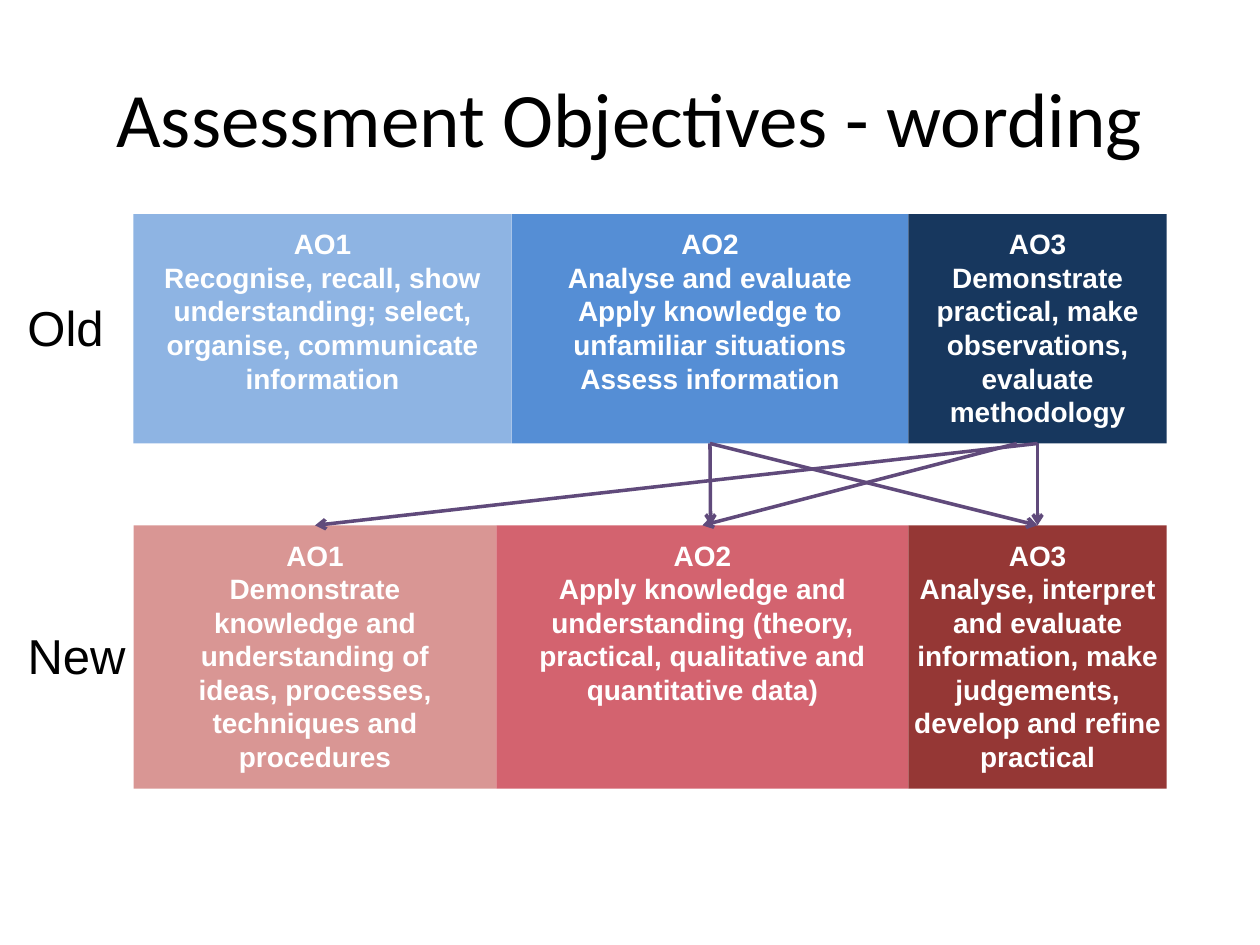
from lxml.etree import SubElement
from pptx import Presentation
from pptx.dml.color import RGBColor
from pptx.enum.shapes import MSO_CONNECTOR, MSO_SHAPE
from pptx.enum.text import MSO_ANCHOR, PP_ALIGN
from pptx.oxml.ns import qn
from pptx.util import Inches, Pt

COLOURS = {
    "black": "000000", "white": "FFFFFF", "arrow": "604A7B",
    "old1": "8EB4E3", "old2": "558ED5", "old3": "17375E",
    "new1": "D99694", "new2": "D3636F", "new3": "953735",
}
LEFT = 1.06
TOP, BOTTOM = 0, 2  # connection sites of a rectangle

# label, top, height, label width, then (width, side inset, colour, lines) per box
OLD = ("Old", 1.7, 1.82, 0.94, [
    (3.0, 0.2, "old1", ["AO1", "Recognise, recall, show understanding; select, "
                        "organise, communicate information"]),
    (3.15, 0.2, "old2", ["AO2", "Analyse and evaluate",
                         "Apply knowledge to unfamiliar situations",
                         "Assess information"]),
    (2.05, 0.04, "old3", ["AO3", "Demonstrate practical, make observations, "
                          "evaluate methodology"]),
])
NEW = ("New", 4.17, 2.09, 1.02, [
    (2.88, 0.2, "new1", ["AO1", "Demonstrate knowledge and understanding of ideas, "
                         "processes, techniques and procedures"]),
    (3.27, 0.2, "new2", ["AO2", "Apply knowledge and understanding (theory, practical, "
                         "qualitative and quantitative data)"]),
    (2.05, 0.04, "new3", ["AO3", "Analyse, interpret and evaluate information, make "
                          "judgements, develop and refine practical"]),
])


class SlideBuilder:
    """Holds the text style and the slide being filled."""

    def __init__(self, page, font="Arial"):
        self.page = page
        self.font = font

    def style(self, para, size, colour, bold=False, font=None):
        para.font.name = font or self.font
        para.font.size = Pt(size)
        para.font.bold = bold
        para.font.color.rgb = RGBColor.from_string(COLOURS[colour])

    def title(self, text):
        title = self.page.shapes.title
        title.left, title.top = Inches(0.5), Inches(0.3)
        title.width, title.height = Inches(9), Inches(1.25)
        title.text_frame.text = text
        title.text_frame.vertical_anchor = MSO_ANCHOR.MIDDLE
        para = title.text_frame.paragraphs[0]
        para.alignment = PP_ALIGN.CENTER
        self.style(para, 44, "black", font="Calibri")

    def label(self, text, top, width, height=0.57):
        box = self.page.shapes.add_textbox(
            Inches(0.12), Inches(top), Inches(width), Inches(height))
        box.text_frame.word_wrap = True
        box.text_frame.text = text
        self.style(box.text_frame.paragraphs[0], 28, "black")

    def objective(self, left, top, width, height, inset, colour, lines):
        box = self.page.shapes.add_shape(
            MSO_SHAPE.RECTANGLE, Inches(left), Inches(top), Inches(width), Inches(height))
        box.shadow.inherit = False
        box.fill.solid()
        box.fill.fore_color.rgb = RGBColor.from_string(COLOURS[colour])
        box.line.fill.background()
        frame = box.text_frame
        frame.word_wrap = True
        frame.vertical_anchor = MSO_ANCHOR.TOP
        frame.margin_left = frame.margin_right = Inches(inset)
        frame.margin_top = frame.margin_bottom = Inches(0.1)
        frame.text = "\n".join(lines)
        for para in frame.paragraphs:
            para.alignment = PP_ALIGN.CENTER
            self.style(para, 16, "white", bold=True)
        return box

    def row(self, name, top, height, label_width, objectives):
        """Draw a label and its abutting boxes; return the boxes."""
        boxes = []
        left = LEFT
        for width, inset, colour, lines in objectives:
            boxes.append(self.objective(left, top, width, height, inset, colour, lines))
            left += width
        self.label(name, top + height / 2 - 0.3, label_width)
        return boxes

    def arrow(self, start_x, end_x, source=None, target=None):
        """Run from the old row down to the new one, joined to any box given."""
        line = self.page.shapes.add_connector(
            MSO_CONNECTOR.STRAIGHT, Inches(start_x), Inches(OLD[1] + OLD[2]),
            Inches(end_x), Inches(NEW[1]))
        if source is not None:
            line.begin_connect(source, BOTTOM)
        if target is not None:
            line.end_connect(target, TOP)
        line.line.color.rgb = RGBColor.from_string(COLOURS["arrow"])
        line.line.width = Pt(2)
        SubElement(line.line._get_or_add_ln(), qn("a:tailEnd"), type="arrow")
        SubElement(line._element.spPr, qn("a:effectLst"))


def main():
    deck = Presentation()
    deck.slide_width, deck.slide_height = Inches(10), Inches(7.5)
    builder = SlideBuilder(deck.slides.add_slide(deck.slide_layouts[5]))
    builder.title("Assessment Objectives - wording")
    new1, new2, new3 = builder.row(*NEW)
    old1, old2, old3 = builder.row(*OLD)
    builder.arrow(8.23, 2.5, old3, new1)
    builder.arrow(8.07, 5.57, target=new2)
    builder.arrow(8.23, 8.23, old3, new3)
    builder.arrow(5.64, 5.64, source=old2)
    builder.arrow(5.63, 8.23, old2, new3)
    deck.save("out.pptx")


if __name__ == "__main__":
    main()
